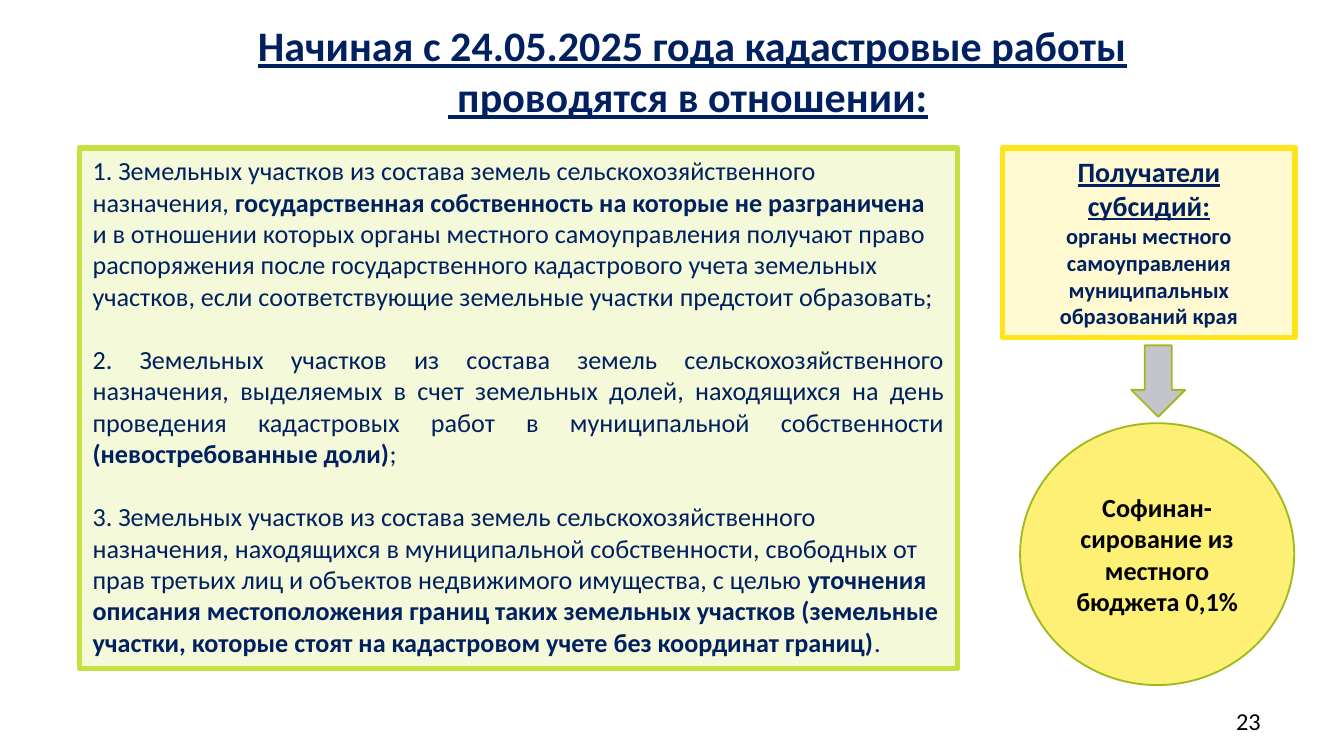
from pptx import Presentation
from pptx.dml.color import RGBColor
from pptx.enum.shapes import MSO_SHAPE
from pptx.enum.text import MSO_ANCHOR, MSO_AUTO_SIZE, PP_ALIGN
from pptx.util import Cm, Pt

RECT, OVAL, ARROW = MSO_SHAPE.RECTANGLE, MSO_SHAPE.OVAL, MSO_SHAPE.DOWN_ARROW
LEFT, CENTER, JUSTIFY = PP_ALIGN.LEFT, PP_ALIGN.CENTER, PP_ALIGN.JUSTIFY
TOP, MIDDLE = MSO_ANCHOR.TOP, MSO_ANCHOR.MIDDLE
NAVY, BLACK, OLIVE = "002060", "000000", "A0BA1E"

TITLE = [
    [(" ", ""), ("Начиная с 24.05.2025 года кадастровые работы", "u")],
    [(" проводятся в отношении:", "u")],
]
PLOTS = [
    (LEFT, [
        ("1. Земельных участков из состава земель сельскохозяйственного назначения, ", ""),
        ("государственная собственность на которые не разграничена ", "b"),
        ("и в отношении которых органы местного самоуправления получают право "
         "распоряжения после государственного кадастрового учета земельных участков, "
         "если соответствующие земельные участки предстоит образовать;", ""),
    ]),
    (JUSTIFY, [
        ("2. Земельных участков из состава земель сельскохозяйственного назначения, "
         "выделяемых в счет земельных долей, находящихся на день проведения "
         "кадастровых работ в муниципальной собственности ", ""),
        ("(невостребованные доли)", "b"),
        (";", ""),
    ]),
    (LEFT, [
        ("3. Земельных участков из состава земель сельскохозяйственного назначения, "
         "находящихся в муниципальной собственности, свободных от прав третьих лиц "
         "и объектов недвижимого имущества, с целью ", ""),
        ("уточнения описания местоположения границ таких земельных участков "
         "(земельные участки, которые стоят на кадастровом учете без координат границ)", "b"),
        (".", ""),
    ]),
]
RECIPIENTS_HEAD = "Получатели субсидий:"
RECIPIENTS = "органы местного самоуправления муниципальных образований края"
COFUNDING = ["Софинан-", "сирование из местного бюджета 0,1%"]
PAGE = "23"


def rgb(value):
    """Turn a hex string into a colour."""
    return RGBColor.from_string(value)


def place(sp, left, top, width, height):
    """Move and size a shape, in centimetres."""
    sp.left, sp.top, sp.width, sp.height = map(Cm, (left, top, width, height))


def add_box(s, kind, box, fill, line, weight, anchor=TOP):
    """Add a filled and outlined shape."""
    sp = s.shapes.add_shape(kind, *map(Cm, box))
    sp.shadow.inherit = False
    sp.fill.solid()
    sp.fill.fore_color.rgb = rgb(fill)
    sp.line.color.rgb = rgb(line)
    sp.line.width = Pt(weight)
    sp.text_frame.word_wrap = True
    sp.text_frame.vertical_anchor = anchor
    return sp


def add_text(tf, runs, size, color=NAVY, align=CENTER, bold=False, before=0):
    """Write one paragraph of (text, flags) runs, where b is bold and u is underlined."""
    first = tf.paragraphs[0]
    p = tf.add_paragraph() if first.runs else first
    p.alignment = align
    p.space_before = Pt(before)
    for text, flags in runs:
        r = p.add_run()
        r.text = text
        r.font.name = "Calibri"
        r.font.size = Pt(size)
        r.font.bold = bold or "b" in flags
        r.font.underline = "u" in flags
        r.font.color.rgb = rgb(color)


def main():
    """Build the slide."""
    prs = Presentation()
    prs.slide_width, prs.slide_height = Cm(25.4), Cm(14.29)
    s = prs.slides.add_slide(prs.slide_layouts[5])

    title = s.shapes.title
    place(title, 3.4, 0.25, 19.2, 3.02)
    tf = title.text_frame
    tf.word_wrap, tf.auto_size, tf.vertical_anchor = True, MSO_AUTO_SIZE.NONE, TOP
    for runs in TITLE:
        add_text(tf, runs, 22.5, bold=True)

    plots = add_box(s, RECT, (1.5, 2.8, 16.6, 9.84), "F3F9D9", "C5E041", 3)
    for i, (align, runs) in enumerate(PLOTS):
        add_text(plots.text_frame, runs, 14, align=align, before=17 if i else 0)

    recipients = add_box(s, RECT, (18.95, 2.8, 5.53, 3.58), "FFFAD1", "FEE419", 3)
    add_text(recipients.text_frame, [(RECIPIENTS_HEAD, "u")], 15, bold=True)
    add_text(recipients.text_frame, [(RECIPIENTS, "")], 12, bold=True)

    cofunding = add_box(s, OVAL, (19.28, 8, 5.18, 4.95), "FEEF75", OLIVE, 1, MIDDLE)
    for text in COFUNDING:
        add_text(cofunding.text_frame, [(text, "")], 14, BLACK, bold=True)

    add_box(s, ARROW, (21.38, 6.53, 1.02, 1.35), "C4C5CC", OLIVE, 1)

    page = s.shapes.add_textbox(*map(Cm, (23.06, 13.23, 1.07, 0.76)))
    page.text_frame.word_wrap = True
    add_text(page.text_frame, [(PAGE, "")], 13, BLACK)

    prs.save("out.pptx")


if __name__ == "__main__":
    main()
